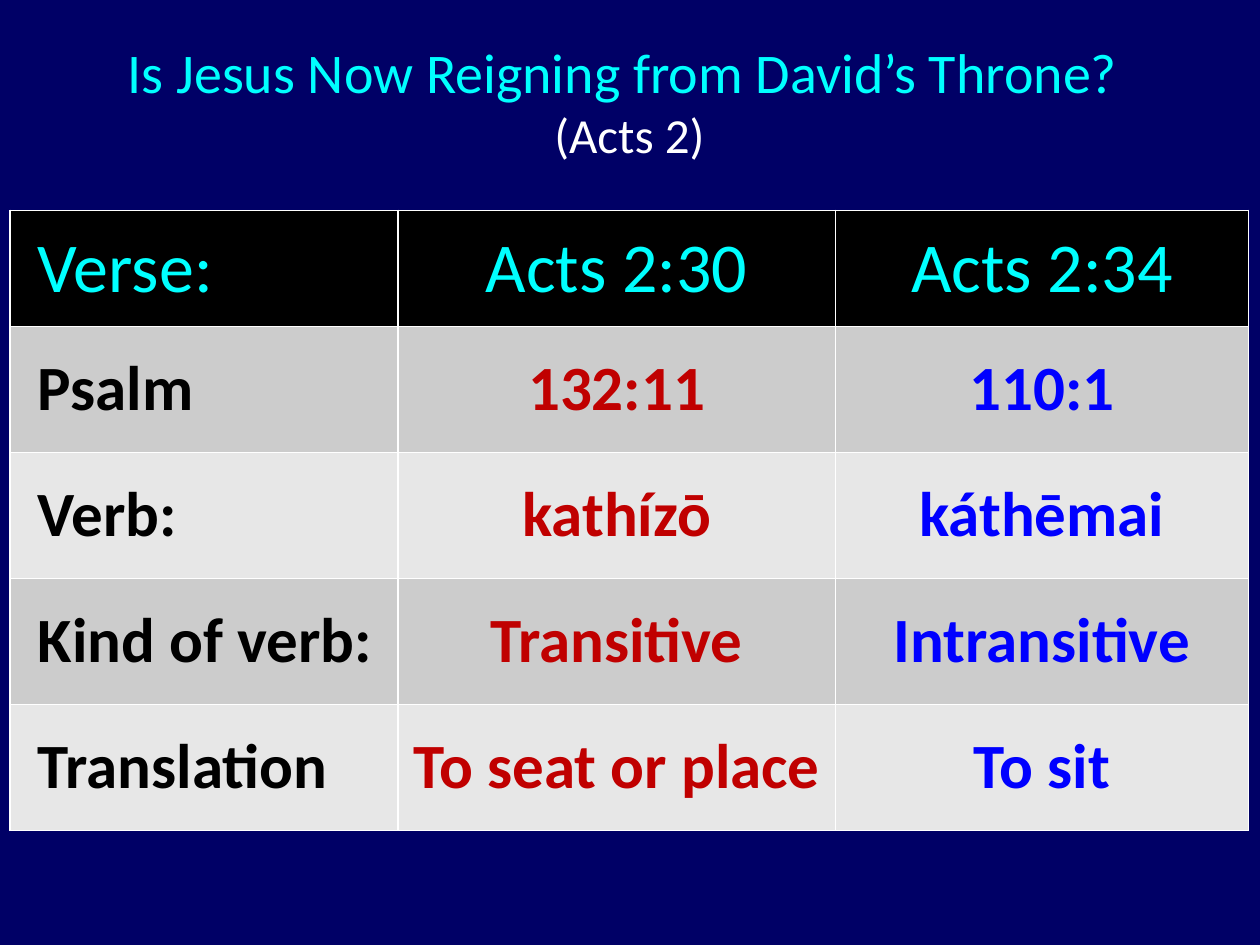
from pptx import Presentation
from pptx.dml.color import RGBColor
from pptx.enum.text import MSO_ANCHOR as Anchor, PP_ALIGN as Align
from pptx.util import Inches, Pt


def color(value):
    return RGBColor.from_string(value)


def add_run(paragraph, text, size, hex_color, bold=False):
    run = paragraph.add_run()
    run.text = text
    run.font.name = "Calibri"
    run.font.size = Pt(size)
    run.font.bold = bold
    run.font.color.rgb = color(hex_color)


presentation = Presentation()
presentation.slide_width = Inches(10)
presentation.slide_height = Inches(7.5)
slide = presentation.slides.add_slide(presentation.slide_layouts[6])
slide.background.fill.solid()
slide.background.fill.fore_color.rgb = color("000066")

verses = [
    ["Verse:", "Acts 2:30", "Acts 2:34"],
    ["Psalm", "132:11", "110:1"],
    ["Verb:", "kathízō", "káthēmai"],
    ["Kind of verb:", "Transitive", "Intransitive"],
    ["Translation", "To seat or place", "To sit"],
]
column_widths = [3.08, 3.47, 3.28]
row_heights = [0.92, 1, 1, 1, 1]
column_colors = ["000000", "C00000", "0000FF"]

table = slide.shapes.add_table(
    len(verses), len(column_widths), Inches(0.08), Inches(1.67),
    Inches(sum(column_widths)), Inches(sum(row_heights))).table
for column, width in zip(table.columns, column_widths):
    column.width = Inches(width)
for row, height in zip(table.rows, row_heights):
    row.height = Inches(height)

for row_index, texts in enumerate(verses):
    is_header = row_index == 0
    band = "CCCCCC" if row_index % 2 else "E7E7E7"
    for column_index, text in enumerate(texts):
        cell = table.cell(row_index, column_index)
        cell.fill.solid()
        cell.fill.fore_color.rgb = color("000000" if is_header else band)
        cell.vertical_anchor = Anchor.MIDDLE
        paragraph = cell.text_frame.paragraphs[0]
        if column_index == 0:
            paragraph.alignment = Align.LEFT
            paragraph._p.get_or_add_pPr().set("marL", str(Inches(0.12)))
        else:
            paragraph.alignment = Align.CENTER
        if is_header:
            paragraph.space_after = Pt(12)
            add_run(paragraph, text, 40, "00FFFF")
        else:
            add_run(paragraph, text, 36, column_colors[column_index], True)

title = slide.shapes.add_textbox(Inches(0.12), Inches(0.25), Inches(9.75), Inches(1))
title.text_frame.word_wrap = True
paragraph = title.text_frame.paragraphs[0]
paragraph.alignment = Align.CENTER
add_run(paragraph, "Is Jesus Now Reigning from David’s Throne? ", 32, "00FFFF")
paragraph.add_line_break()
add_run(paragraph, "(Acts 2)", 28, "FFFFFF")

presentation.save("out.pptx")
